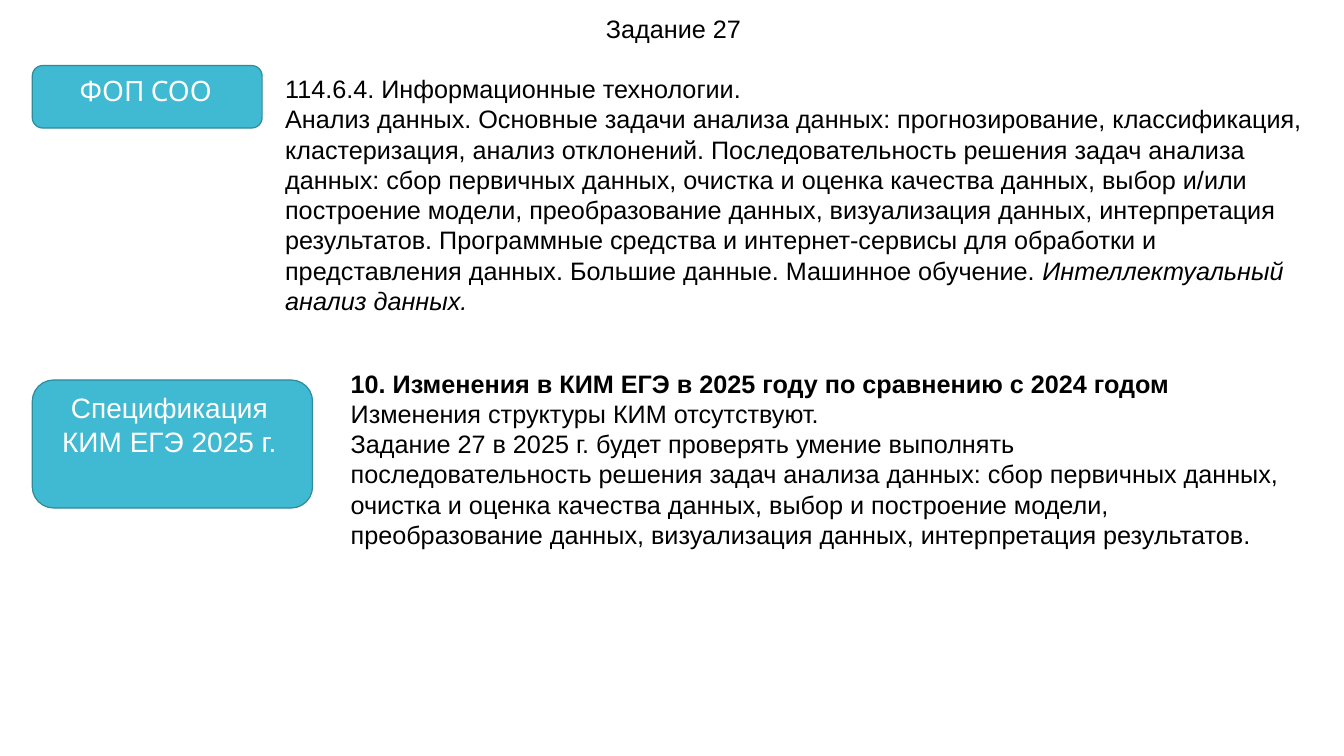
from dataclasses import dataclass

import pptx
import pptx.dml.color
import pptx.enum.shapes
import pptx.enum.text
import pptx.util

Inches = pptx.util.Inches
ALIGN = pptx.enum.text.PP_ALIGN
Box = tuple[float, float, float, float]


@dataclass(frozen=True)
class Theme:
    text: str = "000000"
    label_text: str = "FFFFFF"
    label_fill: str = "40BAD2"
    label_line: str = "2F8A9B"
    font: str = "Arial"
    body_size: int = 18
    label_size: int = 20
    line_width: float = 0.85


@dataclass(frozen=True)
class Run:
    text: str
    bold: bool = False
    italic: bool = False


@dataclass(frozen=True)
class Section:
    label: str
    label_font: str
    label_box: Box
    label_text_box: Box
    body_box: Box
    body: list[list[Run]]


THEME = Theme()

SECTIONS = [
    Section(
        "ФОП СОО", "Cabin",
        (0.32, 0.65, 2.28, 0.62), (0.46, 0.68, 1.97, 0.44), (2.73, 0.68, 10.37, 2.52),
        [
            [Run("114.6.4. Информационные технологии.")],
            [Run("Анализ данных. Основные задачи анализа данных: прогнозирование, "
                 "классификация, кластеризация, анализ отклонений. Последовательность "
                 "решения задач анализа данных: сбор первичных данных, очистка и оценка "
                 "качества данных, выбор и/или")],
            [Run("построение модели, преобразование данных, визуализация данных, "
                 "интерпретация результатов. Программные средства и интернет-сервисы для "
                 "обработки и представления данных. Большие данные. Машинное обучение. "),
             Run("Интеллектуальный анализ данных.", italic=True)],
        ],
    ),
    Section(
        "Спецификация КИМ ЕГЭ 2025 г.", THEME.font,
        (0.32, 3.77, 2.78, 1.27), (0.48, 3.83, 2.4, 0.84), (3.38, 3.6, 10.37, 1.92),
        [
            [Run("10. Изменения в КИМ ЕГЭ в 2025 году по сравнению с 2024 годом", bold=True)],
            [Run("Изменения структуры КИМ отсутствуют.")],
            [Run("Задание 27 в 2025 г. будет проверять умение выполнять")],
            [Run("последовательность решения задач анализа данных: сбор первичных данных,")],
            [Run("очистка и оценка качества данных, выбор и построение модели,")],
            [Run("преобразование данных, визуализация данных, интерпретация результатов.")],
        ],
    ),
]


def rgb(value: str) -> pptx.dml.color.RGBColor:
    return pptx.dml.color.RGBColor.from_string(value)


def write(tf, paragraphs: list[list[Run]], *, size: int = THEME.body_size,
          font: str = THEME.font, color: str = THEME.text,
          align=ALIGN.LEFT, wrap: bool = True) -> None:
    """Fill a text frame with formatted paragraphs."""
    tf.word_wrap = wrap
    tf.auto_size = pptx.enum.text.MSO_AUTO_SIZE.SHAPE_TO_FIT_TEXT
    tf.vertical_anchor = pptx.enum.text.MSO_ANCHOR.TOP
    for i, runs in enumerate(paragraphs):
        p = tf.paragraphs[0] if i == 0 else tf.add_paragraph()
        p.alignment = align
        for run in runs:
            r = p.add_run()
            r.text = run.text
            r.font.size = pptx.util.Pt(size)
            r.font.name = font
            r.font.bold = run.bold
            r.font.italic = run.italic
            r.font.color.rgb = rgb(color)


def add_text(s, box: Box, paragraphs: list[list[Run]], **fmt) -> None:
    sp = s.shapes.add_textbox(*map(Inches, box))
    write(sp.text_frame, paragraphs, **fmt)


def add_title(s, text: str, box: Box) -> None:
    sp = s.shapes.title
    sp.left, sp.top, sp.width, sp.height = map(Inches, box)
    write(sp.text_frame, [[Run(text)]], wrap=False)


def add_section(s, section: Section) -> None:
    # Rounded label
    sp = s.shapes.add_shape(pptx.enum.shapes.MSO_SHAPE.ROUNDED_RECTANGLE,
                            *map(Inches, section.label_box))
    sp.shadow.inherit = False
    sp.fill.solid()
    sp.fill.fore_color.rgb = rgb(THEME.label_fill)
    sp.line.color.rgb = rgb(THEME.label_line)
    sp.line.width = pptx.util.Pt(THEME.line_width)
    add_text(s, section.label_text_box, [[Run(section.label)]], size=THEME.label_size,
             font=section.label_font, color=THEME.label_text, align=ALIGN.CENTER)
    # Quoted text
    add_text(s, section.body_box, section.body)


def main() -> None:
    prs = pptx.Presentation()
    prs.slide_width, prs.slide_height = Inches(13.33), Inches(7.5)
    s = prs.slides.add_slide(prs.slide_layouts[5])
    add_title(s, "Задание 27", (5.91, 0.08, 1.55, 0.4))
    for section in SECTIONS:
        add_section(s, section)
    prs.save("out.pptx")


if __name__ == "__main__":
    main()
